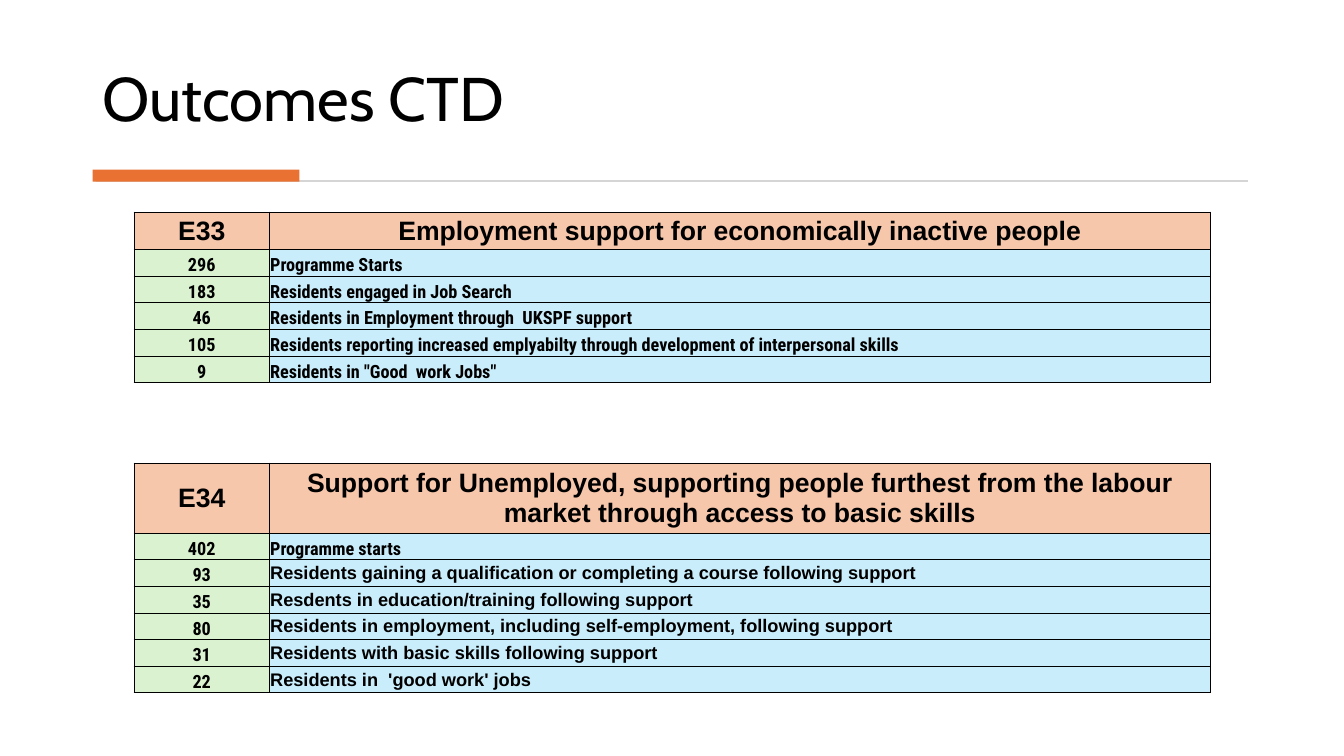
from dataclasses import dataclass

from lxml import etree
from pptx import Presentation
from pptx.dml.color import RGBColor
from pptx.enum.shapes import MSO_SHAPE
from pptx.enum.text import MSO_ANCHOR, PP_ALIGN
from pptx.oxml.ns import qn
from pptx.util import Pt

RECT = MSO_SHAPE.RECTANGLE
LEFT, CENTER = PP_ALIGN.LEFT, PP_ALIGN.CENTER
MIDDLE, BOTTOM = MSO_ANCHOR.MIDDLE, MSO_ANCHOR.BOTTOM


@dataclass(frozen=True)
class Theme:
    ink: str = "000000"
    rule: str = "D5D5D5"
    accent: str = "E97132"
    header: str = "F7C7AC"
    count: str = "DAF2D0"
    outcome: str = "CAEDFB"
    title_font: str = "Cabin"
    head_font: str = "Arial"
    body_font: str = "Roboto Condensed"
    title_size: int = 44
    head_size: int = 19
    body_size: int = 13
    gap_size: int = 10
    thick: float = 1
    thin: float = 0.5


T = Theme()
COLUMNS = (96.6, 672.1)
ROW_HEIGHT = 19
GAP_HEIGHT = 19.2
GAP_ROWS = 3

SECTIONS = [
    ("E33", "Employment support for economically inactive people", 26.7, [
        ("296", "Programme Starts", T.body_font),
        ("183", "Residents engaged in Job Search", T.body_font),
        ("46", "Residents in Employment through  UKSPF support", T.body_font),
        ("105", "Residents reporting increased emplyabilty through development "
                "of interpersonal skills", T.body_font),
        ("9", 'Residents in "Good  work Jobs"', T.body_font),
    ]),
    ("E34", "Support for Unemployed, supporting people furthest from the labour "
            "market through access to basic skills", 50, [
        ("402", "Programme starts", T.body_font),
        ("93", "Residents gaining a qualification or completing a course "
               "following support", T.head_font),
        ("35", "Resdents in education/training following support", T.head_font),
        ("80", "Residents in employment, including self-employment, "
               "following support", T.head_font),
        ("31", "Residents with basic skills following support", T.head_font),
        ("22", "Residents in  'good work' jobs", T.head_font),
    ]),
]


def style(p, font, size, bold=False, align=LEFT):
    p.alignment = align
    p.font.name = font
    p.font.size = Pt(size)
    p.font.bold = bold
    p.font.color.rgb = RGBColor.from_string(T.ink)


def add_title(s, text):
    tf = s.shapes.add_textbox(Pt(66), Pt(20), Pt(828), Pt(80)).text_frame
    tf.word_wrap = True
    tf.vertical_anchor = BOTTOM
    p = tf.paragraphs[0]
    p.text = text
    p.line_spacing = 0.9
    style(p, T.title_font, T.title_size)


def add_bar(s, x, y, w, h, color):
    sp = s.shapes.add_shape(RECT, Pt(x), Pt(y), Pt(w), Pt(h))
    sp.shadow.inherit = False
    sp.fill.solid()
    sp.fill.fore_color.rgb = RGBColor.from_string(color)
    sp.line.fill.background()


def set_borders(cell, widths):
    tcPr = cell._tc.get_or_add_tcPr()
    for i, (side, width) in enumerate(zip(("lnL", "lnR", "lnT", "lnB"), widths)):
        ln = etree.Element(qn(f"a:{side}"), w=str(int(Pt(width))))
        if width:
            fill = etree.SubElement(ln, qn("a:solidFill"))
            etree.SubElement(fill, qn("a:srgbClr"), val=T.ink)
        else:
            etree.SubElement(ln, qn("a:noFill"))
        tcPr.insert(i, ln)


def fill_cell(cell, text, color, font, size, align, anchor, borders):
    cell.margin_left = cell.margin_right = cell.margin_top = Pt(0.6)
    cell.margin_bottom = 0
    cell.vertical_anchor = anchor
    cell.fill.solid()
    cell.fill.fore_color.rgb = RGBColor.from_string(color)
    p = cell.text_frame.paragraphs[0]
    p.text = text
    style(p, font, size, True, align)
    set_borders(cell, borders)


def fill_section(table, top, section):
    code, heading, height, outcomes = section
    table.rows[top].height = Pt(height)
    for col, text in enumerate((code, heading)):
        sides = (T.thin, T.thick) if col else (T.thick, T.thin)
        fill_cell(table.cell(top, col), text, T.header, T.head_font, T.head_size,
                  CENTER, MIDDLE, (*sides, T.thick, T.thin))
    for i, (count, outcome, font) in enumerate(outcomes, 1):
        table.rows[top + i].height = Pt(ROW_HEIGHT)
        bottom = T.thick if i == len(outcomes) else T.thin
        anchor = MIDDLE if font == T.head_font else BOTTOM
        fill_cell(table.cell(top + i, 0), count, T.count, T.body_font, T.body_size,
                  CENTER, BOTTOM, (T.thick, T.thin, T.thin, bottom))
        fill_cell(table.cell(top + i, 1), outcome, T.outcome, font, T.body_size,
                  LEFT, anchor, (T.thin, T.thick, T.thin, bottom))
    return top + len(outcomes) + 1


def fill_gap(table, top):
    for row in range(top, top + GAP_ROWS):
        table.rows[row].height = Pt(GAP_HEIGHT)
        for cell in table.rows[row].cells:
            cell.margin_top = cell.margin_bottom = 0
            cell.fill.background()
            cell.text_frame.paragraphs[0].font.size = Pt(T.gap_size)
            above = T.thick if row == top else 0
            below = T.thick if row == top + GAP_ROWS - 1 else 0
            set_borders(cell, (0, 0, above, below))
    return top + GAP_ROWS


def add_outcomes(s, sections):
    rows = sum(len(section[3]) + 1 for section in sections)
    rows += GAP_ROWS * (len(sections) - 1)
    table = s.shapes.add_table(rows, len(COLUMNS), Pt(95.8), Pt(151.6),
                               Pt(sum(COLUMNS)), Pt(rows * ROW_HEIGHT)).table
    table.first_row = table.horz_banding = False
    for column, width in zip(table.columns, COLUMNS):
        column.width = Pt(width)
    top = 0
    for section in sections:
        if top:
            top = fill_gap(table, top)
        top = fill_section(table, top, section)


def main():
    prs = Presentation()
    prs.slide_width, prs.slide_height = Pt(960), Pt(540)
    s = prs.slides.add_slide(prs.slide_layouts[6])
    add_title(s, "Outcomes CTD")
    add_bar(s, 68.4, 128.6, 823, 1.4, T.rule)
    add_bar(s, 66.2, 121.2, 147.6, 8.6, T.accent)
    add_outcomes(s, SECTIONS)
    prs.save("out.pptx")


if __name__ == "__main__":
    main()
